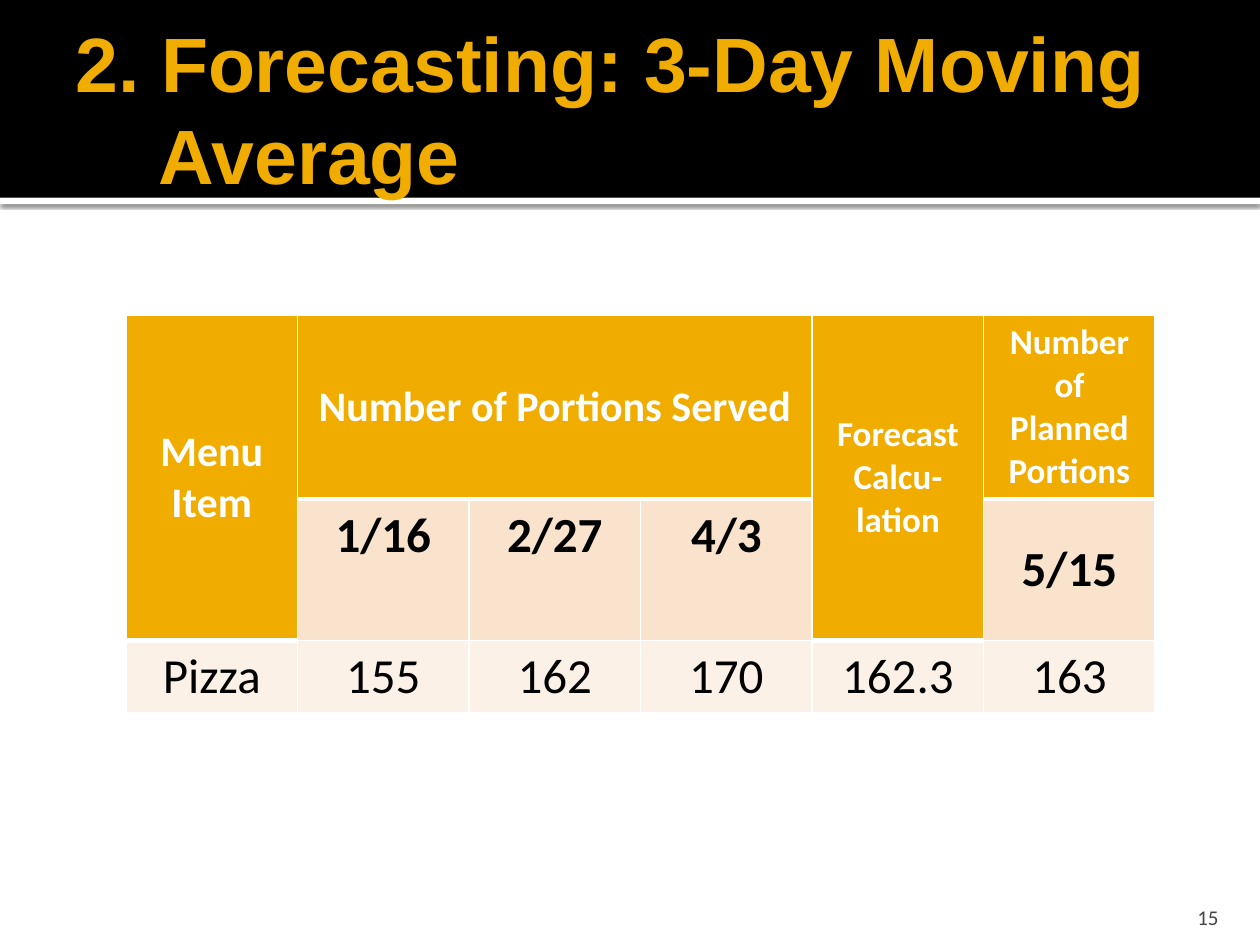
import pptx
import pptx.util
import pptx.oxml
import pptx.oxml.ns
import pptx.dml.color
import pptx.enum.shapes
import pptx.enum.text
from pptx.util import Inches, Pt

COLORS = {
    "gold": "F0AD00", "black": "000000", "white": "FFFFFF",
    "dates": "F9E3CC", "values": "FCF1E7", "number": "454545",
}
ALIGN = pptx.enum.text.PP_ALIGN
ANCHOR = pptx.enum.text.MSO_ANCHOR
NAMESPACE = pptx.oxml.ns.nsdecls("a")


def rgb(name):
    return pptx.dml.color.RGBColor.from_string(COLORS[name])


def style_text(frame, size, color, bold=False, align=ALIGN.LEFT, font="Calibri"):
    for paragraph in frame.paragraphs:
        paragraph.alignment = align
        for run in paragraph.runs:
            run.font.name = font
            run.font.size = Pt(size)
            run.font.bold = bold
            run.font.color.rgb = rgb(color)


def set_margins(frame, left, top, right, bottom):
    frame.margin_left, frame.margin_top = Inches(left), Inches(top)
    frame.margin_right, frame.margin_bottom = Inches(right), Inches(bottom)


def add_band(slide, left, top, width, height, color):
    band = slide.shapes.add_shape(
        pptx.enum.shapes.MSO_SHAPE.RECTANGLE,
        Inches(left), Inches(top), Inches(width), Inches(height))
    band.shadow.inherit = False
    band.fill.solid()
    band.fill.fore_color.rgb = rgb(color)
    band.line.fill.background()
    # Keep the bands behind the title
    slide.shapes.title._element.addprevious(band._element)
    return band


def add_header(slide, left, top, width, height):
    # White rule with a soft shadow, then the black band
    rule = add_band(slide, left, top + height, width, 0.05, "white")
    effects = rule._element.spPr.find(pptx.oxml.ns.qn("a:effectLst"))
    effects.append(pptx.oxml.parse_xml(
        f'<a:outerShdw {NAMESPACE} blurRad="{Pt(2.5)}" dist="{Pt(0.8)}" dir="5400000" '
        f'algn="tl" rotWithShape="0"><a:srgbClr val="{COLORS["black"]}">'
        '<a:alpha val="60000"/></a:srgbClr></a:outerShdw>'))
    add_band(slide, left, top, width, height, "black")

    # Title with a hanging second line
    title = slide.shapes.title
    title.left, title.top = Inches(left + 0.5), Inches(top + 0.17)
    title.width, title.height = Inches(width - 1), Inches(1.37)
    frame = title.text_frame
    frame.text = "2. Forecasting: 3-Day Moving\vAverage"
    frame.word_wrap = True
    frame.auto_size = pptx.enum.text.MSO_AUTO_SIZE.NONE
    frame.vertical_anchor = ANCHOR.MIDDLE
    set_margins(frame, 0.1, 0.05, 0.05, 0.05)
    style_text(frame, 44, "gold", True, font="Arial")
    properties = frame.paragraphs[0]._p.get_or_add_pPr()
    properties.set("marL", str(Inches(0.66)))
    properties.set("indent", str(-Inches(0.66)))


def set_borders(cell, bottom_width):
    properties = cell._tc.get_or_add_tcPr()
    widths = {"lnL": 1, "lnR": 1, "lnT": 1, "lnB": bottom_width}
    for position, (side, width) in enumerate(widths.items()):
        properties.insert(position, pptx.oxml.parse_xml(
            f'<a:{side} {NAMESPACE} w="{Pt(width)}"><a:solidFill>'
            f'<a:srgbClr val="{COLORS["white"]}"/></a:solidFill></a:{side}>'))


def fill_cell(cell, text, fill, size, color, bold, anchor=ANCHOR.MIDDLE, bottom_width=1):
    cell.text = text
    cell.vertical_anchor = anchor
    style_text(cell.text_frame, size, color, bold, ALIGN.CENTER)
    cell.fill.solid()
    cell.fill.fore_color.rgb = rgb(fill)
    set_borders(cell, bottom_width)


def add_forecast_table(slide, left, top, width, row_heights):
    columns = 6
    table = slide.shapes.add_table(
        len(row_heights), columns, Inches(left), Inches(top),
        Inches(width), Inches(sum(row_heights))).table
    for column in table.columns:
        column.width = Inches(width / columns)
    for row, height in zip(table.rows, row_heights):
        row.height = Inches(height)

    # Headings: column, text, size, rows and columns spanned
    headings = [
        (0, "Menu Item", 24, 2, 1),
        (1, "Number of Portions Served", 24, 1, 3),
        (4, "Forecast Calcu-lation", 20, 2, 1),
        (5, "Number of Planned Portions", 20, 1, 1),
    ]
    for column, text, size, rows_spanned, columns_spanned in headings:
        heading = table.cell(0, column)
        last = table.cell(rows_spanned - 1, column + columns_spanned - 1)
        if last != heading and rows_spanned * columns_spanned > 1:
            heading.merge(last)
        fill_cell(heading, text, "gold", size, "white", True, bottom_width=3)
        for row in range(rows_spanned):
            for offset in range(columns_spanned):
                if row or offset:
                    set_borders(table.cell(row, column + offset), 3)

    # Dates, with the planned day centred in its cell
    dates = {1: "1/16", 2: "2/27", 3: "4/3", 5: "5/15"}
    for column, date in dates.items():
        anchor = ANCHOR.MIDDLE if column == 5 else ANCHOR.TOP
        fill_cell(table.cell(1, column), date, "dates", 28, "black", True, anchor)

    # Portions
    for column, value in enumerate(["Pizza", "155", "162", "170", "162.3", "163"]):
        fill_cell(table.cell(2, column), value, "values", 28, "black", False)


def add_page_number(slide, left, top, width, height):
    page_number = slide.shapes.add_textbox(
        Inches(left), Inches(top), Inches(width), Inches(height))
    frame = page_number.text_frame
    frame.text = "15"
    frame.word_wrap = True
    frame.vertical_anchor = ANCHOR.BOTTOM
    set_margins(frame, 0.1, 0.05, 0.1, 0)
    style_text(frame, 12, "number", align=ALIGN.RIGHT)


def main():
    presentation = pptx.Presentation()
    presentation.slide_width = Inches(10)
    presentation.slide_height = Inches(7.5)
    slide = presentation.slides.add_slide(presentation.slide_layouts[5])
    add_header(slide, 0, 0, 10, 1.57)
    add_forecast_table(slide, 1, 2.5, 8.17, [1.45, 1.12, 0.57])
    add_page_number(slide, 8.97, 7.08, 0.8, 0.3)
    presentation.save("out.pptx")


if __name__ == "__main__":
    main()
